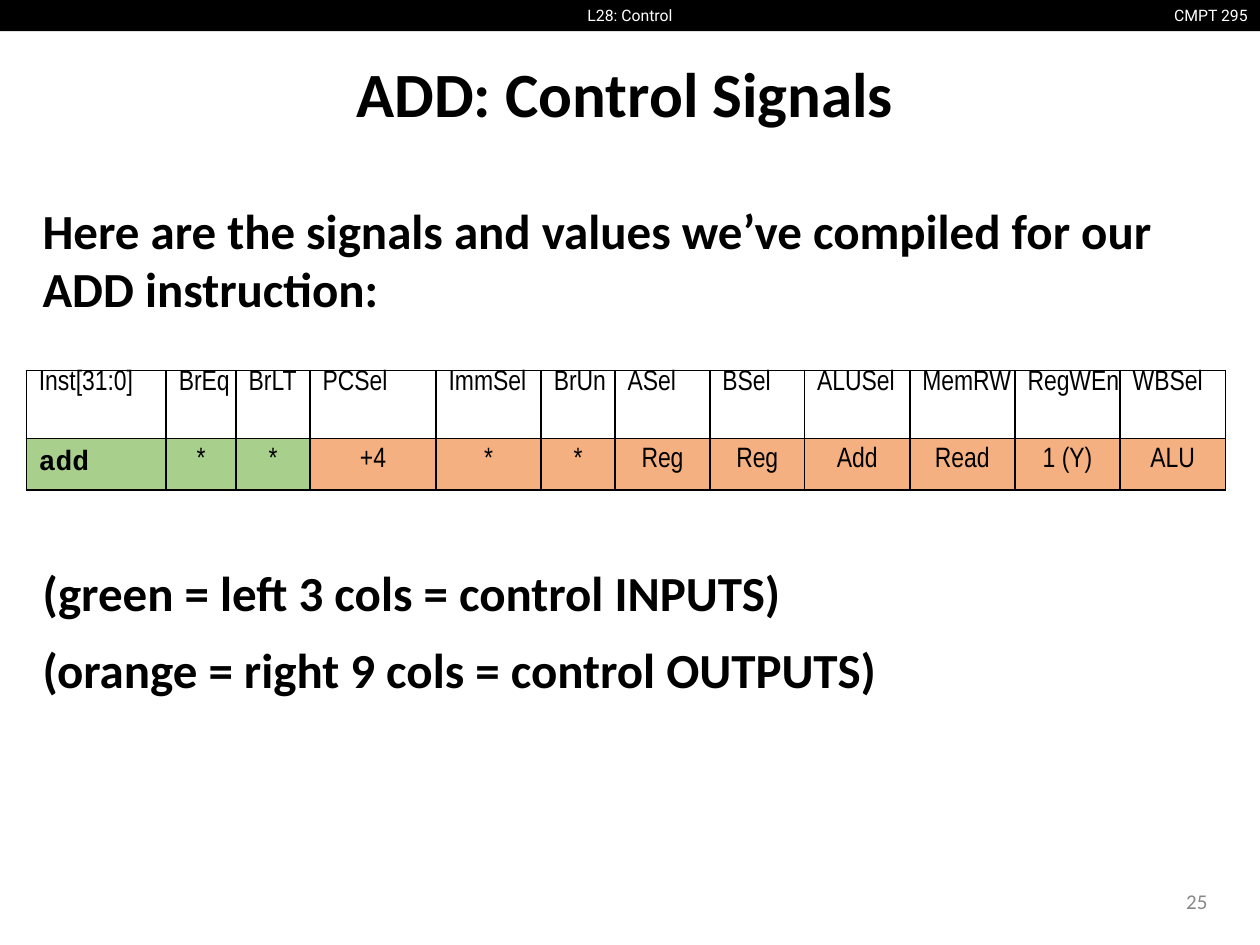
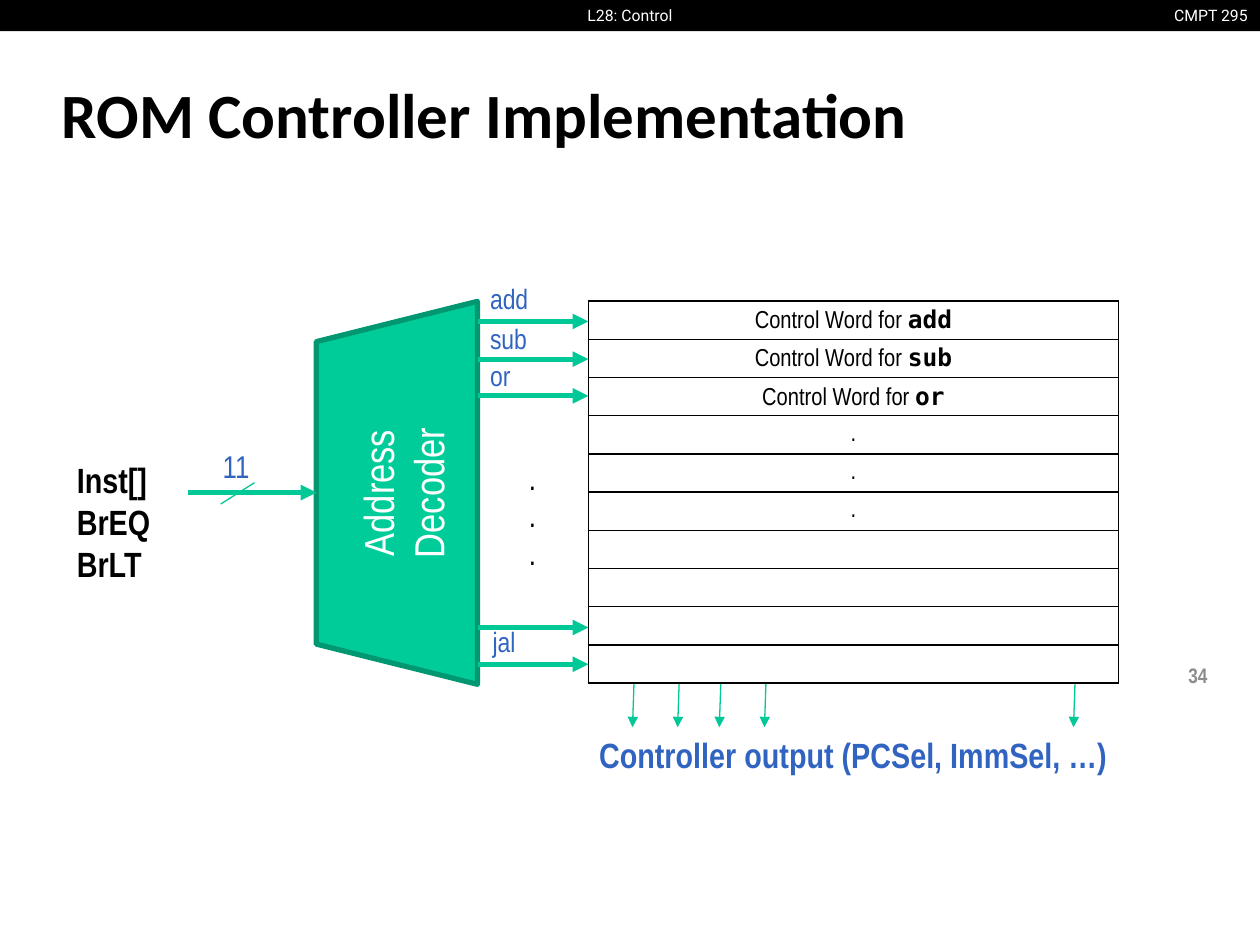
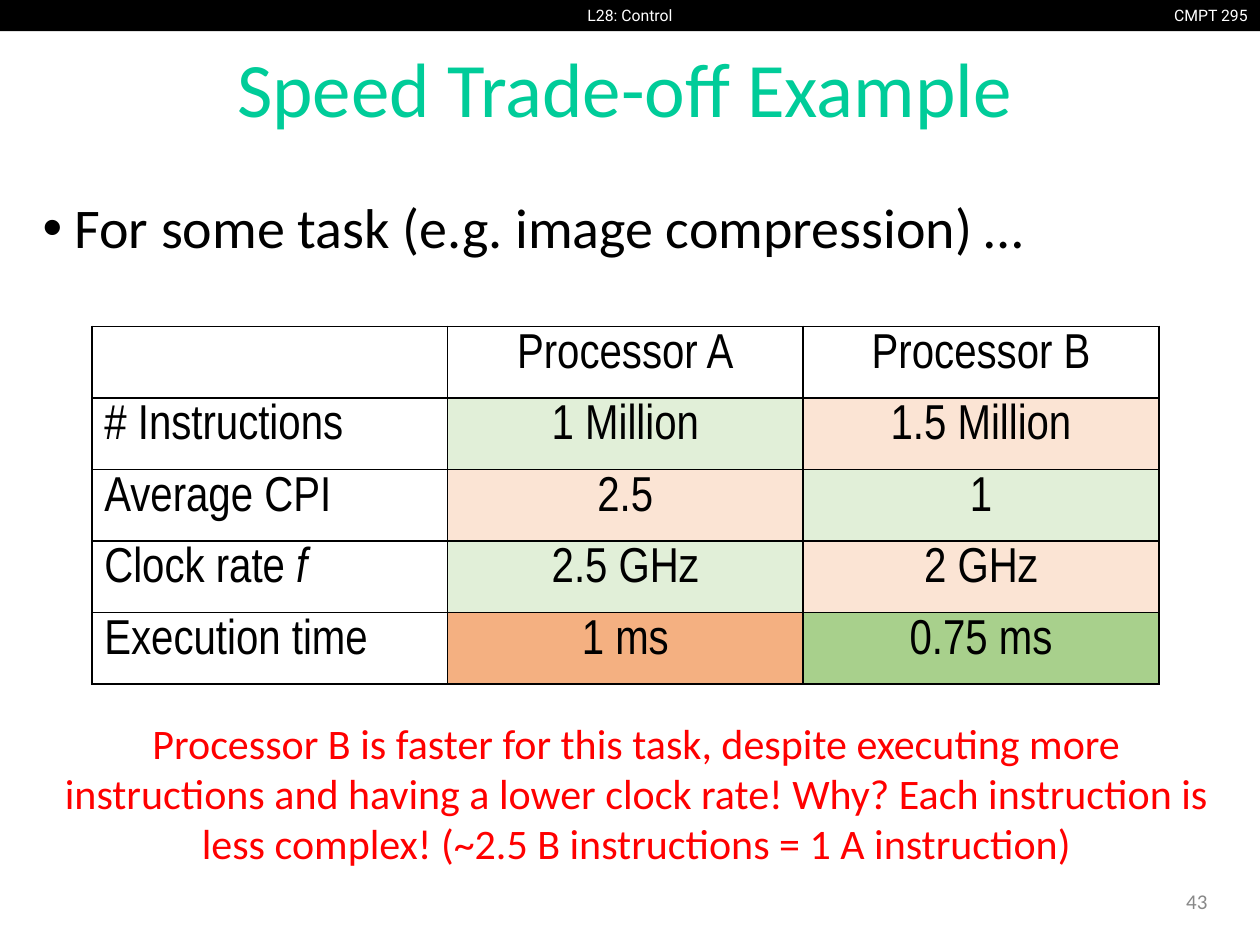
import dataclasses

import lxml.etree
import pptx
import pptx.dml.color
import pptx.enum.shapes
import pptx.enum.text
import pptx.oxml.ns
import pptx.util

Cm, Pt = pptx.util.Cm, pptx.util.Pt
RGB = pptx.dml.color.RGBColor.from_string
qn = pptx.oxml.ns.qn
ALIGN = pptx.enum.text.PP_ALIGN
MIDDLE = pptx.enum.text.MSO_ANCHOR.MIDDLE
SHAPE = pptx.enum.shapes.MSO_SHAPE


@dataclasses.dataclass(frozen=True)
class Theme:
    black: str = "000000"
    white: str = "FFFFFF"
    red: str = "FF0000"
    page_grey: str = "888888"
    bold_page_grey: str = "8C8C8C"
    teal: str = "00CC99"
    dark_teal: str = "009771"
    arrow_teal: str = "00C896"
    signal_blue: str = "3064C0"
    green: str = "A8D08C"
    orange: str = "F4B081"
    pale_green: str = "E1EFD8"
    pale_orange: str = "FBE4D4"
    body_font: str = "Calibri"
    diagram_font: str = "Arial Narrow"
    header_font: str = "Roboto"
    code_font: str = "Courier New"
    word_font: str = "DejaVu Sans Mono"
    header_size: int = 9
    page_size: int = 12
    word_size: int = 14
    signal_size: int = 16
    count_size: int = 18
    input_size: int = 20
    note_size: int = 24
    text_size: int = 28
    bullet_size: int = 32
    title_size: int = 36
    big_title_size: int = 44


THEME = Theme()


def write(frame, lines, size, font=THEME.body_font, color=THEME.black, bold=False,
          align=ALIGN.LEFT, spacing=None, bullet=None):
    """Fill a text frame with one paragraph per line, all in one style."""
    for number, line in enumerate(lines):
        paragraph = frame.add_paragraph() if number else frame.paragraphs[0]
        paragraph.text = line
        paragraph.alignment = align
        if spacing:
            paragraph.line_spacing = spacing
        if bullet:
            properties = paragraph._p.get_or_add_pPr()
            properties.set("marL", str(Cm(0.64)))
            properties.set("indent", str(-Cm(0.64)))
            lxml.etree.SubElement(properties, qn("a:buFont"), typeface="Arial")
            lxml.etree.SubElement(properties, qn("a:buChar"), char=bullet)
        paragraph.font.size = Pt(size)
        paragraph.font.name = font
        paragraph.font.bold = bold
        paragraph.font.color.rgb = RGB(color)


def add_grid(slide, left, top, widths, heights):
    """Add a table without fill, ruled in black."""
    table = slide.shapes.add_table(len(heights), len(widths), Cm(left), Cm(top),
                                   Cm(sum(widths)), Cm(sum(heights))).table
    table.first_row = table.horz_banding = False
    for column, width in zip(table.columns, widths):
        column.width = Cm(width)
    for row, height in zip(table.rows, heights):
        row.height = Cm(height)
    for cell in table.iter_cells():
        properties = cell._tc.get_or_add_tcPr()
        for side in ("lnL", "lnR", "lnT", "lnB"):
            rule = lxml.etree.SubElement(properties, qn(f"a:{side}"), w=str(Pt(1)))
            paint = lxml.etree.SubElement(rule, qn("a:solidFill"))
            lxml.etree.SubElement(paint, qn("a:srgbClr"), val=THEME.black)
        cell.fill.background()
    return table


deck = pptx.Presentation()
deck.slide_width, deck.slide_height = Cm(25.4), Cm(19.05)

# Shared parts: title, header band and page number
high_title = (0.61, 0.41, 23.98, 2.92)
low_title = (0.99, 1.22, 23.34, 2.11)
low_page = (18.87, 17.65, 5.72, 1.02)
high_page = (18.87, 13.23, 5.72, 0.76)
openings = [
    ("ADD: Control Signals", high_title,
     dict(size=THEME.title_size, bold=True, align=ALIGN.CENTER),
     "25", low_page, dict(color=THEME.page_grey)),
    ("ROM Controller Implementation", low_title,
     dict(size=THEME.title_size, bold=True),
     "34", high_page,
     dict(color=THEME.bold_page_grey, font=THEME.diagram_font, bold=True)),
    ("Speed Trade-off Example", high_title,
     dict(size=THEME.big_title_size, color=THEME.teal, align=ALIGN.CENTER, spacing=0.9),
     "43", low_page, dict(color=THEME.page_grey)),
]
for heading, title_box, title_style, page, page_box, page_style in openings:
    slide = deck.slides.add_slide(deck.slide_layouts[5])
    title = slide.shapes.title
    title.left, title.top, title.width, title.height = map(Cm, title_box)
    title.text_frame.auto_size = pptx.enum.text.MSO_AUTO_SIZE.NONE
    title.text_frame.vertical_anchor = MIDDLE
    write(title.text_frame, [heading], **title_style)

    band = slide.shapes.add_shape(SHAPE.RECTANGLE, 0, 0, deck.slide_width, Cm(0.63))
    band.shadow.inherit = False
    band.fill.solid()
    band.fill.fore_color.rgb = RGB(THEME.black)
    band.line.fill.background()
    for label, left, width, align in [("CMPT 295", 23.34, 2.06, ALIGN.RIGHT),
                                      ("L28: Control", 11.29, 2.82, ALIGN.CENTER)]:
        header = slide.shapes.add_textbox(Cm(left), 0, Cm(width), Cm(0.63)).text_frame
        write(header, [label], THEME.header_size, THEME.header_font, THEME.white, align=align)

    page_number = slide.shapes.add_textbox(*map(Cm, page_box)).text_frame
    page_number.word_wrap = True
    page_number.vertical_anchor = MIDDLE
    write(page_number, [page], THEME.page_size, align=ALIGN.RIGHT, **page_style)

add_slide, rom_slide, speed_slide = deck.slides

# ADD signals: explanation, with room for the table between its paragraphs
explanation = add_slide.shapes.add_textbox(Cm(0.61), Cm(3.91), Cm(23.98), Cm(13.26)).text_frame
explanation.word_wrap = True
write(explanation,
      ["Here are the signals and values we’ve compiled for our ADD instruction:",
       "(green = left 3 cols = control INPUTS)",
       "(orange = right 9 cols = control OUTPUTS)"],
      THEME.text_size, bold=True)
explanation.paragraphs[1].space_before = Pt(140)
explanation.paragraphs[2].space_before = Pt(10)

# ADD signals: table of signal names, values and column widths
signals = [
    ("Inst[31:0]", "add", 2.82), ("BrEq", "*", 1.41), ("BrLT", "*", 1.49),
    ("PCSel", "+4", 2.54), ("ImmSel", "*", 2.12), ("BrUn", "*", 1.49),
    ("ASel", "Reg", 1.91), ("BSel", "Reg", 1.91), ("ALUSel", "Add", 2.12),
    ("MemRW", "Read", 2.12), ("RegWEn", "1 (Y)", 2.12), ("WBSel", "ALU", 2.12),
]
input_count = 3
signal_table = add_grid(add_slide, 0.53, 7.47, [width for _, _, width in signals], [1.37, 1.02])
for column, (signal, value, _) in enumerate(signals):
    name_cell, value_cell = signal_table.cell(0, column), signal_table.cell(1, column)
    name_cell.margin_top = name_cell.margin_right = name_cell.margin_bottom = 0
    write(name_cell.text_frame, [signal], THEME.signal_size, THEME.diagram_font)
    value_cell.margin_top = value_cell.margin_bottom = Cm(0.18)
    value_cell.fill.solid()
    value_cell.fill.fore_color.rgb = RGB(THEME.green if column < input_count else THEME.orange)
    if column == 0:
        write(value_cell.text_frame, [value], THEME.signal_size, THEME.code_font, bold=True)
    else:
        write(value_cell.text_frame, [value], THEME.signal_size, THEME.diagram_font,
              align=ALIGN.CENTER)

# ROM controller: control words
instructions = ["add", "sub", "or"]
word_table = add_grid(rom_slide, 11.86, 6.07, [10.69], [0.77] * 10)
for row, cell in enumerate(word_table.iter_cells()):
    cell.margin_top = cell.margin_bottom = 0
    cell.vertical_anchor = MIDDLE
    named = row < len(instructions)
    text = "Control Word for " if named else "." if row < 6 else ""
    write(cell.text_frame, [text], THEME.word_size, THEME.diagram_font, align=ALIGN.CENTER)
    if named:
        instruction = cell.text_frame.paragraphs[0].add_run()
        instruction.text = instructions[row]
        instruction.font.name = THEME.word_font
        instruction.font.bold = True

# ROM controller: address decoder
decoder = rom_slide.shapes.add_shape(SHAPE.TRAPEZOID, Cm(4.14), Cm(8.31), Cm(7.72), Cm(3.25))
decoder.rotation = 270
decoder.shadow.inherit = False
decoder.fill.solid()
decoder.fill.fore_color.rgb = RGB(THEME.teal)
decoder.line.color.rgb = RGB(THEME.dark_teal)
decoder.line.width = Pt(3)
decoder.text_frame.vertical_anchor = MIDDLE
write(decoder.text_frame, ["Address", "Decoder"], THEME.note_size, THEME.diagram_font,
      THEME.white, align=ALIGN.CENTER)

# ROM controller: address, input and output arrows, and the bus slash
wires = [(9.63, y, 11.86, y, 3, True) for y in (6.48, 7.24, 7.98, 12.65, 13.39)]
wires += [(3.78, 9.93, 6.38, 9.93, 3, True)]
wires += [(x, 13.79, x - 0.03, 14.66, 0.75, True) for x in (12.78, 13.69, 14.53, 15.44, 21.67)]
wires += [(4.45, 10.16, 5.13, 9.73, 0.75, False)]
for x1, y1, x2, y2, weight, has_head in wires:
    wire = rom_slide.shapes.add_connector(pptx.enum.shapes.MSO_CONNECTOR.STRAIGHT,
                                          Cm(x1), Cm(y1), Cm(x2), Cm(y2))
    wire.line.color.rgb = RGB(THEME.arrow_teal)
    wire.line.width = Pt(weight)
    wire_properties = wire._element.spPr
    if has_head:
        lxml.etree.SubElement(wire_properties.find(qn("a:ln")), qn("a:tailEnd"), type="triangle")
    lxml.etree.SubElement(wire_properties, qn("a:effectLst"))

# ROM controller: labels
blue = dict(color=THEME.signal_blue)
labels = [
    ([".", ".", "."], (10.41, 9.12, 0.69, 2.57), THEME.count_size, {}),
    (["Inst[]", "BrEQ", "BrLT"], (1.3, 9.12, 2.08, 2.82), THEME.input_size, dict(bold=True)),
    (["Controller output (PCSel, ImmSel, …)"], (11.79, 14.66, 10.82, 1.12), THEME.input_size,
     dict(bold=True, align=ALIGN.CENTER, **blue)),
    (["add"], (9.63, 5.56, 1.3, 0.94), THEME.signal_size, blue),
    (["sub"], (9.63, 6.35, 1.27, 0.94), THEME.signal_size, blue),
    (["or"], (9.63, 7.11, 0.91, 0.94), THEME.signal_size, blue),
    (["jal"], (9.68, 12.47, 0.97, 0.94), THEME.signal_size, blue),
    (["11"], (4.24, 8.89, 1.07, 1.02), THEME.count_size, blue),
]
for lines, box, size, style in labels:
    label_frame = rom_slide.shapes.add_textbox(*map(Cm, box)).text_frame
    write(label_frame, lines, size, THEME.diagram_font, **style)

# Speed trade-off: task and conclusion
task = speed_slide.shapes.add_textbox(Cm(0.61), Cm(3.91), Cm(23.98), Cm(2.72)).text_frame
task.word_wrap = True
write(task, ["For some task (e.g. image compression) …"], THEME.bullet_size,
      spacing=0.9, bullet="•")
conclusion = speed_slide.shapes.add_textbox(Cm(0.84), Cm(14.33), Cm(23.98), Cm(3.07)).text_frame
conclusion.word_wrap = True
write(conclusion,
      ["Processor B is faster for this task, despite executing more instructions and having "
       "a lower clock rate! Why? Each instruction is less complex! "
       "(~2.5 B instructions = 1 A instruction)"],
      THEME.note_size, color=THEME.red, align=ALIGN.CENTER)

# Speed trade-off: processor comparison, better values in green
better, worse = THEME.pale_green, THEME.pale_orange
comparison = [
    (("", "Processor A", "Processor B"), (None, None, None)),
    (("# Instructions", "1 Million", "1.5 Million"), (None, better, worse)),
    (("Average CPI", "2.5", "1"), (None, worse, better)),
    (("Clock rate ", "2.5 GHz", "2 GHz"), (None, better, worse)),
    (("Execution time", "1 ms", "0.75 ms"), (None, THEME.orange, THEME.green)),
]
speed_table = add_grid(speed_slide, 1.85, 6.58, [7.17] * 3, [1.44] * 5)
for row, (texts, fills) in enumerate(comparison):
    for column, (text, fill) in enumerate(zip(texts, fills)):
        cell = speed_table.cell(row, column)
        write(cell.text_frame, [text], THEME.text_size, THEME.diagram_font,
              align=ALIGN.CENTER if column else ALIGN.LEFT)
        if fill:
            cell.fill.solid()
            cell.fill.fore_color.rgb = RGB(fill)
frequency = speed_table.cell(3, 0).text_frame.paragraphs[0].add_run()
frequency.text = "f"
frequency.font.italic = True

deck.save("out.pptx")
